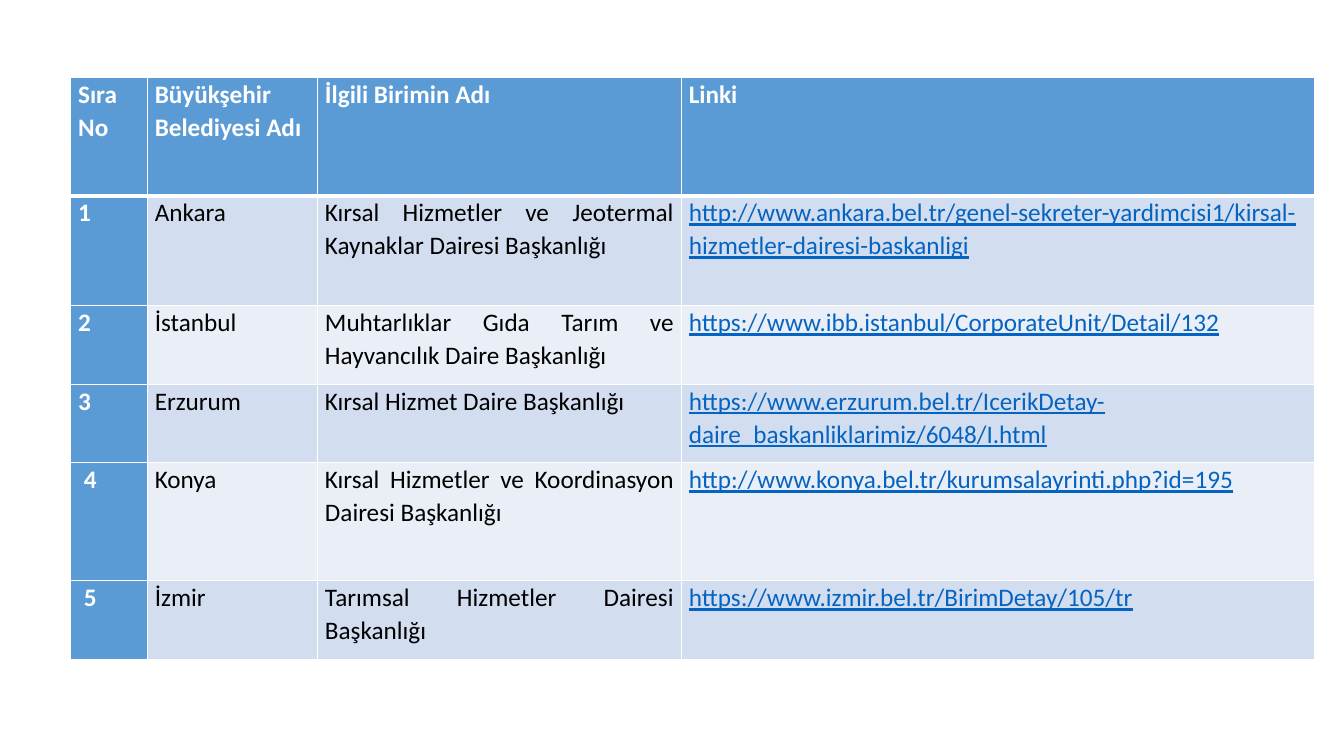
from dataclasses import dataclass

from lxml import etree
from pptx import Presentation
from pptx.dml.color import RGBColor
from pptx.enum.text import PP_ALIGN
from pptx.oxml.ns import qn
from pptx.util import Cm, Pt

JUSTIFY = PP_ALIGN.JUSTIFY


@dataclass(frozen=True)
class Theme:
    font: str = "Calibri"
    size: int = 18
    accent: str = "5B9BD5"
    odd_band: str = "D2DEEF"
    even_band: str = "EAEFF7"
    light: str = "FFFFFF"
    dark: str = "000000"
    link: str = "0563C1"


theme = Theme()


def write_text(cell, text, color=theme.dark, bold=False, underline=False):
    paragraph = cell.text_frame.paragraphs[0]
    paragraph.alignment = JUSTIFY
    paragraph.line_spacing = 1.07
    run = paragraph.add_run()
    run.text = text
    run.font.name = theme.font
    run.font.size = Pt(theme.size)
    run.font.bold = bold
    run.font.underline = underline
    run.font.color.rgb = RGBColor.from_string(color)


def add_borders(cell, widths):
    """Draw light cell borders; widths maps a side (L, R, T, B) to points."""
    properties = cell._tc.get_or_add_tcPr()
    for side, width in widths.items():
        line = etree.SubElement(properties, qn(f"a:ln{side}"), w=str(Pt(width)))
        fill = etree.SubElement(line, qn("a:solidFill"))
        etree.SubElement(fill, qn("a:srgbClr"), val=theme.light)


HEADERS = ["Sıra No", "Büyükşehir Belediyesi Adı", "İlgili Birimin Adı", "Linki"]
MUNICIPALITIES = [
    ["1", "Ankara", "Kırsal Hizmetler ve Jeotermal Kaynaklar Dairesi Başkanlığı",
     "http://www.ankara.bel.tr/genel-sekreter-yardimcisi1/kirsal-hizmetler-dairesi-baskanligi"],
    ["2", "İstanbul", "Muhtarlıklar Gıda Tarım ve Hayvancılık Daire Başkanlığı",
     "https://www.ibb.istanbul/CorporateUnit/Detail/132"],
    ["3", "Erzurum", "Kırsal Hizmet Daire Başkanlığı",
     "https://www.erzurum.bel.tr/IcerikDetay-daire_baskanliklarimiz/6048/I.html"],
    [" 4", "Konya", "Kırsal Hizmetler ve Koordinasyon Dairesi Başkanlığı",
     "http://www.konya.bel.tr/kurumsalayrinti.php?id=195"],
    [" 5", "İzmir", "Tarımsal Hizmetler Dairesi Başkanlığı",
     "https://www.izmir.bel.tr/BirimDetay/105/tr"],
]
COLUMN_WIDTHS = [1.93, 4.29, 9.17, 15.95]
ROW_HEIGHTS = [2.97, 2.77, 1.98, 1.98, 2.97, 1.98]
LINK_COLUMN = 3

presentation = Presentation()
presentation.slide_width = Cm(33.87)
presentation.slide_height = Cm(19.05)
slide = presentation.slides.add_slide(presentation.slide_layouts[6])

table = slide.shapes.add_table(
    len(ROW_HEIGHTS), len(COLUMN_WIDTHS), Cm(1.78), Cm(1.96),
    Cm(sum(COLUMN_WIDTHS)), Cm(sum(ROW_HEIGHTS))).table
table.first_col = True
for column, width in zip(table.columns, COLUMN_WIDTHS):
    column.width = Cm(width)
for row, height in zip(table.rows, ROW_HEIGHTS):
    row.height = Cm(height)

for row_index, texts in enumerate([HEADERS, *MUNICIPALITIES]):
    band = theme.odd_band if row_index % 2 else theme.even_band
    for column_index, text in enumerate(texts):
        cell = table.cell(row_index, column_index)
        cell.margin_left = cell.margin_right = Cm(0.19)
        cell.margin_top = cell.margin_bottom = 0
        is_heading = row_index == 0 or column_index == 0
        add_borders(cell, {"L": 1, "R": 1,
                           "T": 3 if row_index == 1 else 1,
                           "B": 3 if row_index == 0 else 1})
        cell.fill.solid()
        cell.fill.fore_color.rgb = RGBColor.from_string(
            theme.accent if is_heading else band)
        if is_heading:
            write_text(cell, text, color=theme.light, bold=True)
        elif column_index == LINK_COLUMN:
            write_text(cell, text, color=theme.link, underline=True)
        else:
            write_text(cell, text)

presentation.save("out.pptx")
